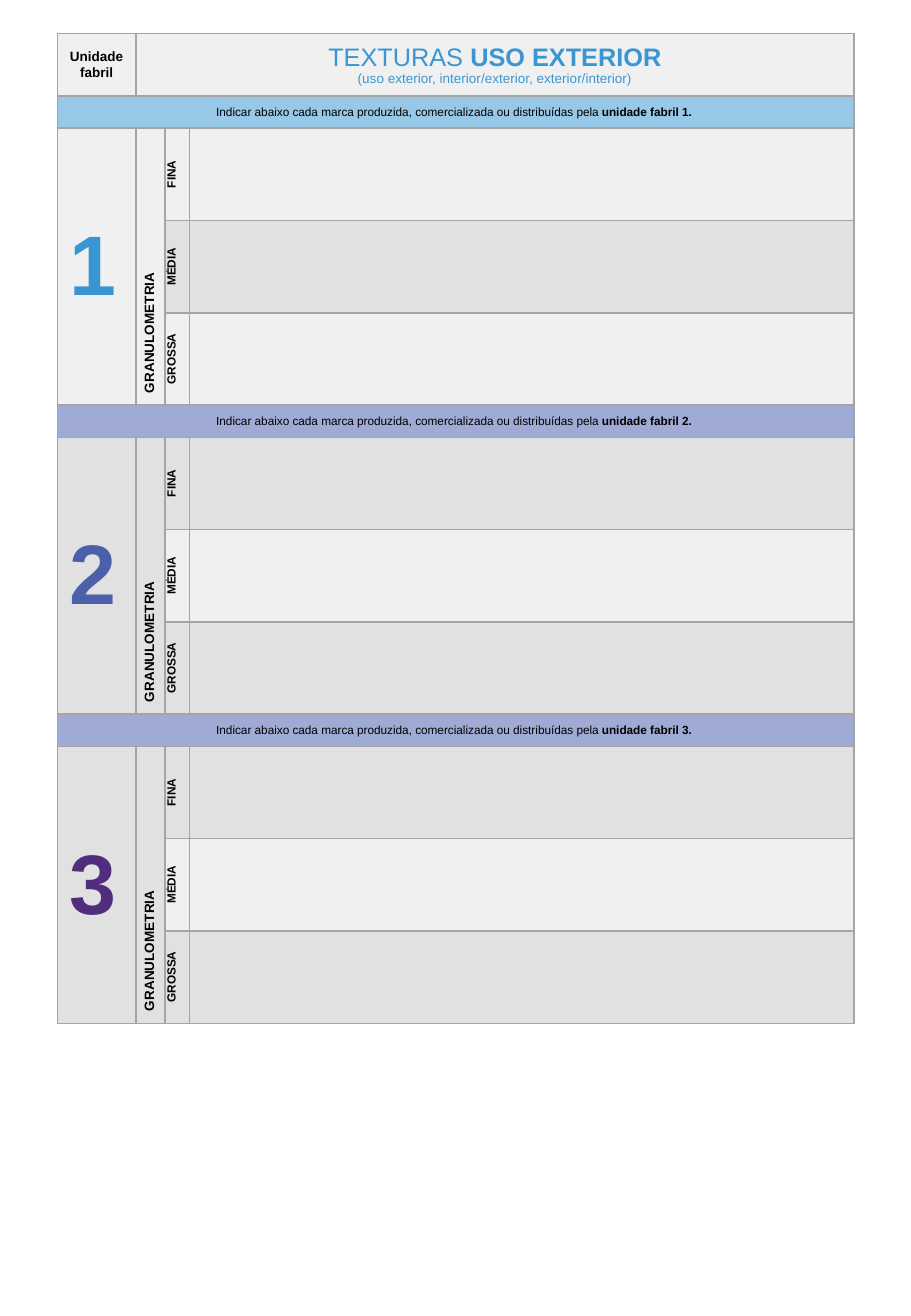
from lxml.etree import SubElement
from pptx import Presentation
from pptx.dml.color import RGBColor
from pptx.enum.text import MSO_ANCHOR, PP_ALIGN
from pptx.oxml.ns import qn
from pptx.util import Cm, Pt

# Content
HEADING = "Unidade fabril"
TITLE = [("TEXTURAS ", False), ("USO EXTERIOR", True)]
SUBTITLE = "(uso exterior, interior/exterior, exterior/interior)"
NOTICE = "Indicar abaixo cada marca produzida, comercializada ou distribuídas pela "
PROPERTY = "GRANULOMETRIA"
GRAINS = ["FINA", "MÉDIA", "GROSSA"]
LIGHT, DARK = "F0F0F0", "E1E1E1"
BLACK, TITLE_BLUE, BORDER = "000000", "3A96D2", "A5A5A5"
# number, number colour, notice fill, alternating grain fills
UNITS = [
    ("1", TITLE_BLUE, "98C8E8", (LIGHT, DARK)),
    ("2", "4B5FAB", "9FABD5", (DARK, LIGHT)),
    ("3", "502D7D", "9FABD5", (DARK, LIGHT)),
]

# Measures in centimetres
LEFT, TOP = 1.2, 0.7
COLUMNS = [1.64, 0.6, 0.51, 13.9]
HEADING_ROW, NOTICE_ROW, GRAIN_ROW = 1.31, 0.67, 1.93
BLOCK = NOTICE_ROW + GRAIN_ROW * len(GRAINS)


def rgb(color):
    return RGBColor.from_string(color)


def paint(cell, fill):
    """Fill a cell and draw its four borders."""
    cell.fill.solid()
    cell.fill.fore_color.rgb = rgb(fill)
    properties = cell._tc.get_or_add_tcPr()
    for place, side in enumerate(("a:lnL", "a:lnR", "a:lnT", "a:lnB")):
        line = SubElement(properties, qn(side), w=str(Pt(1)))
        color = SubElement(SubElement(line, qn("a:solidFill")), qn("a:srgbClr"))
        color.set("val", BORDER)
        properties.insert(place, line)


def write(cell, runs, size, color=BLACK, align=PP_ALIGN.CENTER, upright=False, more=False):
    """Write one paragraph of (text, bold) runs, in a new paragraph if more."""
    cell.vertical_anchor = MSO_ANCHOR.MIDDLE
    if upright:
        cell._tc.get_or_add_tcPr().set("vert", "vert270")
    frame = cell.text_frame
    paragraph = frame.add_paragraph() if more else frame.paragraphs[0]
    paragraph.alignment = align
    for text, bold in runs:
        run = paragraph.add_run()
        run.text = text
        run.font.name = "Arial"
        run.font.size = Pt(size)
        run.font.bold = bold
        run.font.color.rgb = rgb(color)
    return paragraph


def add_unit(slide, top, unit, has_heading):
    number, number_color, notice_fill, grain_fills = unit
    heights = [HEADING_ROW] * has_heading + [NOTICE_ROW] + [GRAIN_ROW] * len(GRAINS)
    frame = slide.shapes.add_table(len(heights), len(COLUMNS), Cm(LEFT), Cm(top),
                                   Cm(sum(COLUMNS)), Cm(sum(heights)))
    table = frame.table
    for column, width in zip(table.columns, COLUMNS):
        column.width = Cm(width)
    for row, height in zip(table.rows, heights):
        row.height = Cm(height)
    notice = int(has_heading)
    first, last = notice + 1, notice + len(GRAINS)

    # Fills and borders
    fills = [LIGHT] * has_heading + [notice_fill]
    fills += [grain_fills[i % 2] for i in range(len(GRAINS))]
    for row, fill in enumerate(fills):
        for column in range(len(COLUMNS)):
            merged_side = row >= first and column < 2
            paint(table.cell(row, column), grain_fills[0] if merged_side else fill)

    # Heading row
    if has_heading:
        table.cell(0, 1).merge(table.cell(0, 3))
        write(table.cell(0, 0), [(HEADING, True)], 8)
        write(table.cell(0, 1), TITLE, 15, TITLE_BLUE)
        write(table.cell(0, 1), [(SUBTITLE, False)], 8, TITLE_BLUE, more=True)

    # Notice row
    table.cell(notice, 0).merge(table.cell(notice, 3))
    write(table.cell(notice, 0), [(NOTICE, False), (f"unidade fabril {number}. ", True)], 7)

    # Unit number and property
    for column in (0, 1):
        table.cell(first, column).merge(table.cell(last, column))
    write(table.cell(first, 0), [(number, True)], 50, number_color, PP_ALIGN.LEFT)
    write(table.cell(first, 1), [(PROPERTY, True)], 8, align=PP_ALIGN.LEFT, upright=True)

    # Grain sizes
    for row, grain in enumerate(GRAINS, first):
        label = table.cell(row, 2)
        label.margin_left = label.margin_right = Cm(0.13)
        label.margin_top = label.margin_bottom = 0
        write(label, [(grain, True)], 7, upright=True).space_after = Pt(4)


def main():
    deck = Presentation()
    deck.slide_width, deck.slide_height = Cm(19.05), Cm(27.51)
    slide = deck.slides.add_slide(deck.slide_layouts[6])
    for index, unit in enumerate(UNITS):
        top = TOP + (HEADING_ROW + index * BLOCK if index else 0)
        add_unit(slide, top, unit, index == 0)
    deck.save("out.pptx")


if __name__ == "__main__":
    main()
